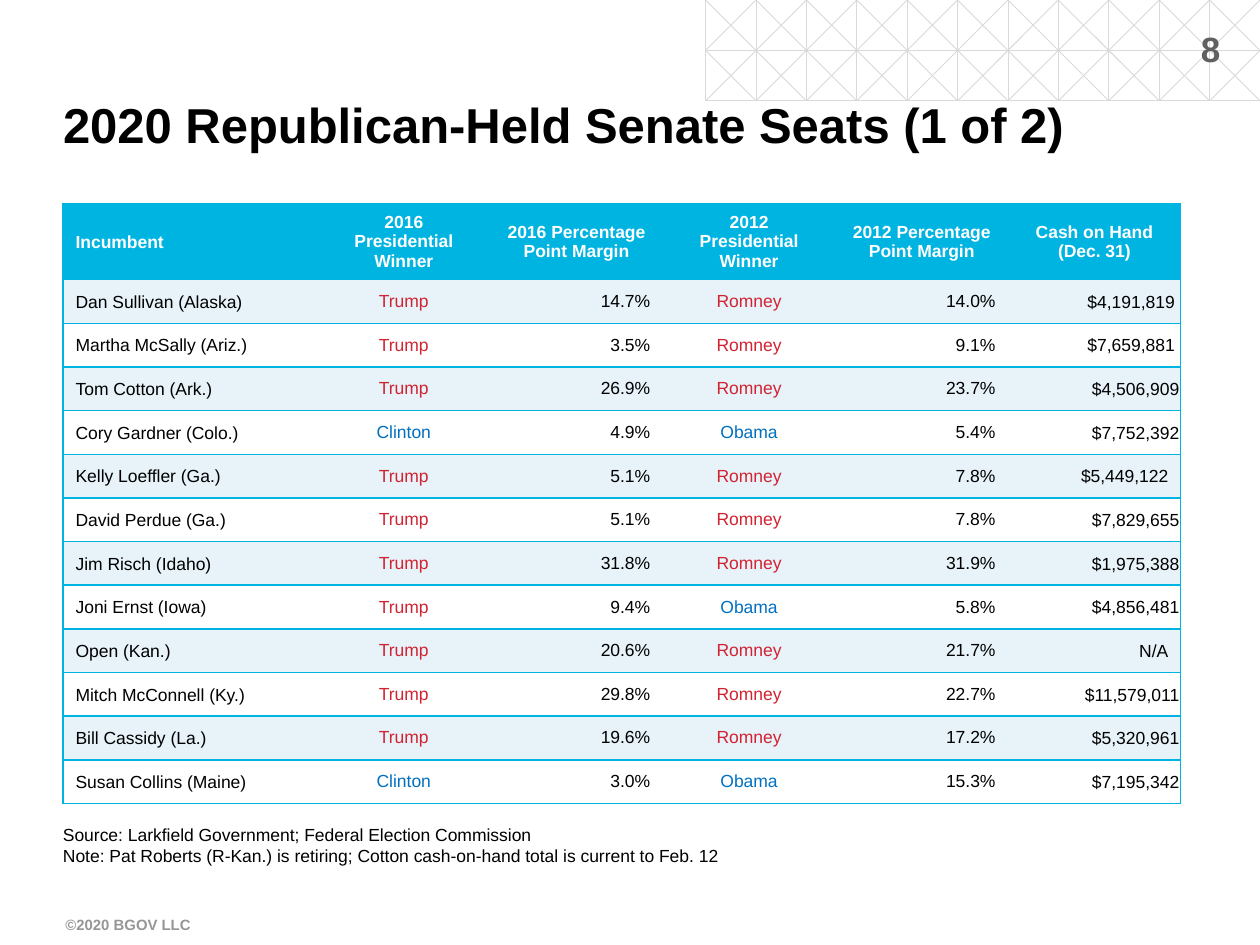
from copy import deepcopy
from lxml import etree
from pptx import Presentation
from pptx import util as u
from pptx.dml.color import RGBColor
from pptx.enum import shapes, text
from pptx.oxml import ns

CYAN = RGBColor(0x00, 0xB4, 0xE1)
PALE = RGBColor(0xE7, 0xF2, 0xF9)
WHITE = RGBColor(0xFF, 0xFF, 0xFF)
BLACK = RGBColor(0x00, 0x00, 0x00)
RED = RGBColor(0xD2, 0x23, 0x32)
BLUE = RGBColor(0x00, 0x70, 0xC0)
RULE = RGBColor(0xD9, 0xD9, 0xD9)
DARK = RGBColor(0x60, 0x60, 0x60)
GREY = RGBColor(0x96, 0x96, 0x96)

TITLE = "2020 Republican-Held Senate Seats (1 of 2)"
HEAD = ("Incumbent", "2016\vPresidential Winner", "2016 Percentage\vPoint Margin",
        "2012\vPresidential Winner", "2012 Percentage\vPoint Margin",
        "Cash on Hand\v(Dec. 31)")
SEATS = [
    ("Dan Sullivan (Alaska)", "Trump", "14.7%", "Romney", "14.0%", "$4,191,819"),
    ("Martha McSally (Ariz.)", "Trump", "3.5%", "Romney", "9.1%", "$7,659,881"),
    ("Tom Cotton (Ark.)", "Trump", "26.9%", "Romney", "23.7%", "$4,506,909"),
    ("Cory Gardner (Colo.)", "Clinton", "4.9%", "Obama", "5.4%", "$7,752,392"),
    ("Kelly Loeffler (Ga.)", "Trump", "5.1%", "Romney", "7.8%", "$5,449,122"),
    ("David Perdue (Ga.)", "Trump", "5.1%", "Romney", "7.8%", "$7,829,655"),
    ("Jim Risch (Idaho)", "Trump", "31.8%", "Romney", "31.9%", "$1,975,388"),
    ("Joni Ernst (Iowa)", "Trump", "9.4%", "Obama", "5.8%", "$4,856,481"),
    ("Open (Kan.)", "Trump", "20.6%", "Romney", "21.7%", "N/A"),
    ("Mitch McConnell (Ky.)", "Trump", "29.8%", "Romney", "22.7%", "$11,579,011"),
    ("Bill Cassidy (La.)", "Trump", "19.6%", "Romney", "17.2%", "$5,320,961"),
    ("Susan Collins (Maine)", "Clinton", "3.0%", "Obama", "15.3%", "$7,195,342"),
]
NOTES = [
    "Source: Larkfield Government; Federal Election Commission",
    "Note: Pat Roberts (R-Kan.) is retiring; Cotton cash-on-hand total is current to Feb. 12",
]
TINT = {"Trump": RED, "Romney": RED, "Clinton": BLUE, "Obama": BLUE}
CASH_PAD = {"$4,191,819": 0.12, "$7,659,881": 0.12, "$5,449,122": 0.25, "N/A": 0.25}

LEFT, MID, RIGHT = text.PP_ALIGN.LEFT, text.PP_ALIGN.CENTER, text.PP_ALIGN.RIGHT
ALIGN = (LEFT, MID, RIGHT, MID, RIGHT, RIGHT)
WIDE, HIGH = 25.4, 19.05
STEP = WIDE / 25
EDGE = 1.27
COLS = [5.13] + [3.48] * 5
ROWS = [1.44] + [0.88] * len(SEATS)


def setall(obj, vals):
    for key, val in vals.items():
        setattr(obj, key, val)


def write(frame, lines, size, tint, bold=False, align=LEFT):
    frame.text = "\n".join(lines)
    for par in frame.paragraphs:
        par.alignment = align
        for run in par.runs:
            setall(run.font, {"name": "Arial", "size": u.Pt(size), "bold": bold})
            run.font.color.rgb = tint
        for gap in par._p.findall(ns.qn("a:br")):
            gap.append(deepcopy(par.runs[0]._r.rPr))


def label(slide, spot, lines, size, tint, bold=False, align=LEFT,
          anchor=text.MSO_ANCHOR.TOP):
    box = slide.shapes.add_textbox(*map(u.Cm, spot))
    setall(box.text_frame, {"word_wrap": True, "margin_left": 0, "margin_right": 0,
                            "vertical_anchor": anchor})
    write(box.text_frame, lines, size, tint, bold, align)


def lattice(slide):
    first, last = 14, 25
    ends = [(first, y, last, y) for y in (1, 2)]
    ends += [(x, 0, x, 2) for x in range(first, last)]
    for x in range(first, last - 1):
        ends += [(x, 0, x + 2, 2), (x + 2, 0, x, 2)]
    ends += [(first + 1, 0, first, 1), (first, 1, first + 1, 2),
             (last - 1, 0, last, 1), (last, 1, last - 1, 2)]
    for end in ends:
        line = slide.shapes.add_connector(shapes.MSO_CONNECTOR.STRAIGHT,
                                          *(u.Cm(n * STEP) for n in end))
        line.line.color.rgb = RULE
        line.line.width = u.Pt(0.5)
        etree.SubElement(line._element.spPr, ns.qn("a:effectLst"))


def border(cell, sides):
    props = cell._tc.get_or_add_tcPr()
    for side in sides:
        line = etree.SubElement(props, ns.qn("a:ln" + side), w=str(u.Pt(1)))
        fill = etree.SubElement(line, ns.qn("a:solidFill"))
        etree.SubElement(fill, ns.qn("a:srgbClr"), val=str(CYAN))


def seats(slide):
    spot = (EDGE, 4.11, sum(COLS), sum(ROWS))
    grid = slide.shapes.add_table(len(ROWS), len(COLS), *map(u.Cm, spot)).table
    style = grid._tbl.tblPr.find(ns.qn("a:tableStyleId"))
    style.text = "{2D5ABB26-0587-4C30-8999-92F81FD0307C}"
    for col, size in zip(grid.columns, COLS):
        col.width = u.Cm(size)
    for row, size in zip(grid.rows, ROWS):
        row.height = u.Cm(size)
    for r, row in enumerate([HEAD] + SEATS):
        for c, word in enumerate(row):
            cell = grid.cell(r, c)
            cell.vertical_anchor = text.MSO_ANCHOR.MIDDLE
            border(cell, {0: "LTB", 5: "RTB"}.get(c, "TB"))
            cell.fill.solid()
            cell.fill.fore_color.rgb = CYAN if r == 0 else PALE if r % 2 else WHITE
            if r == 0:
                write(cell.text_frame, [word], 10, WHITE, True, MID if c else LEFT)
            else:
                write(cell.text_frame, [word], 10, TINT.get(word, BLACK), align=ALIGN[c])
            if c == 0:
                cell.text_frame.paragraphs[0].line_spacing = 1.07
            if r and c == 5:
                setall(cell, {"margin_left": u.Cm(0.03), "margin_top": u.Cm(0.03),
                              "margin_right": u.Cm(CASH_PAD.get(word, 0.03)),
                              "margin_bottom": 0})


def main():
    deck = Presentation()
    setall(deck, {"slide_width": u.Cm(WIDE), "slide_height": u.Cm(HIGH)})
    slide = deck.slides.add_slide(deck.slide_layouts[5])
    lattice(slide)
    label(slide, (23.73, 0.5, 1.35, 0.97), ["8"], 20, DARK, True, MID,
          text.MSO_ANCHOR.MIDDLE)
    label(slide, (1.32, 18.34, 5.61, 0.7), ["©2020 BGOV LLC"], 8.5, GREY, True)
    title = slide.shapes.title
    setall(title, {"left": u.Cm(EDGE), "top": u.Cm(1.9),
                   "width": u.Cm(22.86), "height": u.Cm(1.2)})
    setall(title.text_frame, {"margin_left": 0, "margin_right": 0, "margin_top": 0,
                              "margin_bottom": 0, "word_wrap": True,
                              "auto_size": text.MSO_AUTO_SIZE.NONE,
                              "vertical_anchor": text.MSO_ANCHOR.MIDDLE})
    write(title.text_frame, [TITLE], 28, BLACK, True)
    seats(slide)
    label(slide, (EDGE, 16.48, sum(COLS), 1.27), NOTES, 10, BLACK)
    deck.save("out.pptx")


if __name__ == "__main__":
    main()
